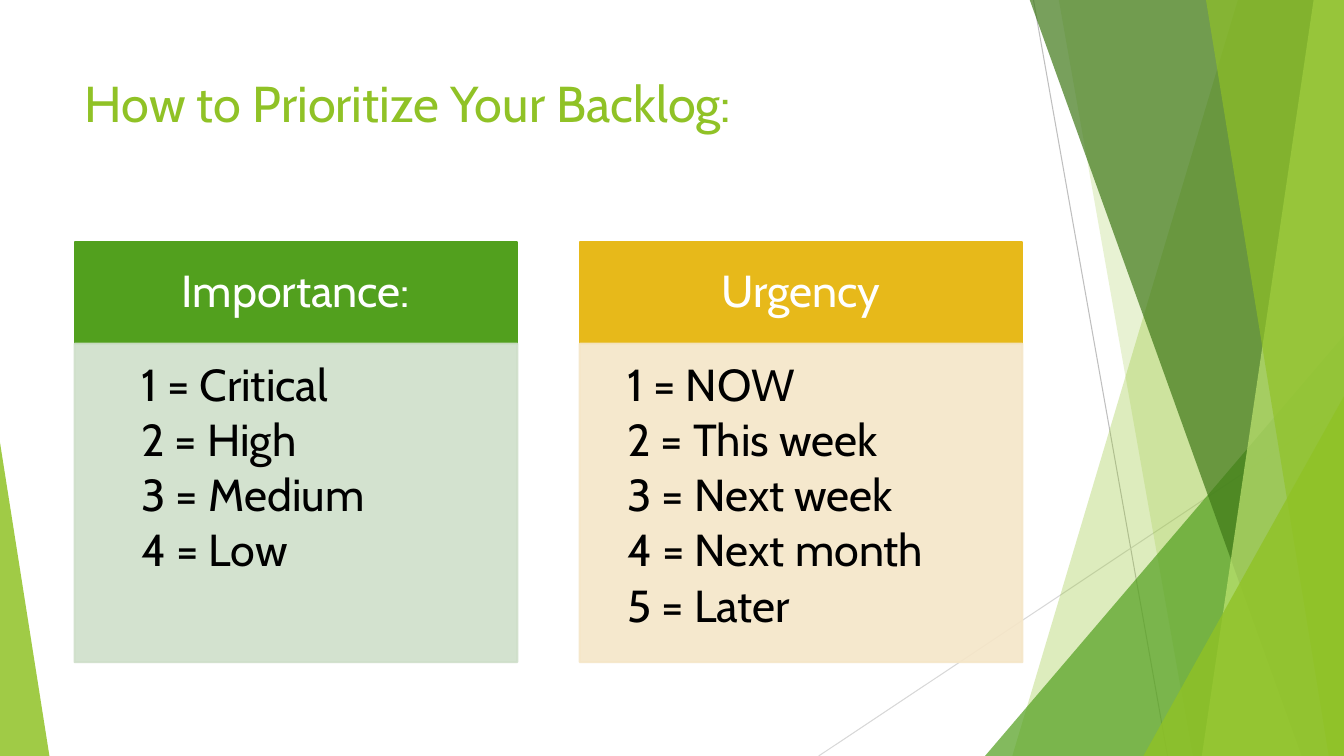
from lxml import etree
from pptx import Presentation
from pptx.dml.color import RGBColor
from pptx.enum.shapes import MSO_CONNECTOR, MSO_SHAPE
from pptx.enum.text import MSO_ANCHOR, MSO_AUTO_SIZE, PP_ALIGN
from pptx.oxml.ns import qn
from pptx.util import Inches, Pt

STRAIGHT = MSO_CONNECTOR.STRAIGHT
TRIANGLE = MSO_SHAPE.ISOSCELES_TRIANGLE
TOP, MIDDLE = MSO_ANCHOR.TOP, MSO_ANCHOR.MIDDLE
LEFT, CENTER = PP_ALIGN.LEFT, PP_ALIGN.CENTER
NO_AUTOFIT = MSO_AUTO_SIZE.NONE
COMPARISON_LAYOUT = 4

COLORS = {
    "lime": "90C226",
    "pale_lime": "BFE471",
    "green": "54A021",
    "dark_green": "3F7818",
    "importance": "52A01E",
    "importance_tint": "CFDFCA",
    "urgency": "E7B91A",
    "urgency_tint": "F5E6C8",
    "gray": "BFBFBF",
    "light_gray": "D8D8D8",
    "white": "FFFFFF",
    "black": "000000",
}
WIDTH, HEIGHT = 13.33, 7.5
CARD_WIDTH = 4.39
HEADING_TOP, HEADING_HEIGHT = 2.4, 1.01
LEVELS_TOP, LEVELS_HEIGHT = 3.41, 3.16


class SlideBuilder:
    font = "Cabin"

    def __init__(self, slide):
        self.slide = slide
        self.shapes = slide.shapes

    def color(self, name):
        return RGBColor.from_string(COLORS[name])

    def paint(self, shape, color, opacity, outlined=False):
        shape.shadow.inherit = False
        shape.fill.solid()
        shape.fill.fore_color.rgb = self.color(color)
        if outlined:
            shape.line.color.rgb = self.color(color)
            shape.line.width = Pt(1.5)
        else:
            shape.line.fill.background()
        if opacity < 100:
            for tone in shape._element.spPr.iter(qn("a:srgbClr")):
                etree.SubElement(tone, qn("a:alpha"), val=str(opacity * 1000))

    def ray(self, start, end, color):
        ray = self.shapes.add_connector(STRAIGHT, *map(Inches, start + end))
        ray.line.color.rgb = self.color(color)
        ray.line.width = Pt(0.75)
        etree.SubElement(ray._element.spPr, qn("a:effectLst"))

    def panel(self, top_x, bottom_x, color, opacity):
        top = Inches(-0.01)
        outline = self.shapes.build_freeform(Inches(top_x), top)
        outline.add_line_segments([
            (Inches(WIDTH), top),
            (Inches(WIDTH), Inches(HEIGHT)),
            (Inches(bottom_x), Inches(HEIGHT)),
        ])
        self.paint(outline.convert_to_shape(), color, opacity)

    def corner(self, left, top, width, peak, color, opacity):
        box = map(Inches, (left, top, width, HEIGHT - top))
        corner = self.shapes.add_shape(TRIANGLE, *box)
        corner.adjustments[0] = peak
        self.paint(corner, color, opacity)

    def fill_placeholder(self, index, text, box, insets, size, color,
                         align=LEFT, anchor=TOP):
        holder = self.slide.placeholders[index]
        self.shapes._spTree.append(holder._element)
        holder.left, holder.top, holder.width, holder.height = map(Inches, box)
        frame = holder.text_frame
        frame.text = text
        frame.word_wrap = True
        frame.auto_size = NO_AUTOFIT
        frame.vertical_anchor = anchor
        (frame.margin_left, frame.margin_top,
         frame.margin_right, frame.margin_bottom) = map(Inches, insets)
        for paragraph in frame.paragraphs:
            paragraph.alignment = align
            paragraph.space_before = Pt(0)
            for run in paragraph.runs:
                run.font.name = self.font
                run.font.size = Pt(size)
                run.font.bold = False
                run.font.color.rgb = self.color(color)
        return holder

    def title(self, text):
        self.fill_placeholder(
            0, text, (0.74, 0.67, 9.4, 1.44), (0.1, 0.05, 0.1, 0.05), 36, "lime")

    def card(self, index, left, heading, levels, indent, color):
        header = self.fill_placeholder(
            index, heading, (left, HEADING_TOP, CARD_WIDTH, HEADING_HEIGHT),
            (0.25, 0.14, 0.25, 0.14), 32, "white", CENTER, MIDDLE)
        self.paint(header, color, 100, outlined=True)
        scale = self.fill_placeholder(
            index + 1, "\n".join(levels), (left, LEVELS_TOP, CARD_WIDTH, LEVELS_HEIGHT),
            (indent, 0.19, 0.25, 0.28), 32, "black")
        self.paint(scale, color + "_tint", 90, outlined=True)
        for paragraph in scale.text_frame.paragraphs[1:]:
            paragraph.space_before = Pt(4.8)
        for paragraph in header.text_frame.paragraphs + scale.text_frame.paragraphs:
            paragraph.line_spacing = 0.9
            properties = paragraph._p.get_or_add_pPr()
            properties.set("marL", "0")
            properties.set("indent", "0")
            etree.SubElement(properties, qn("a:buNone"))


def main():
    deck = Presentation()
    deck.slide_width, deck.slide_height = Inches(WIDTH), Inches(HEIGHT)
    page = SlideBuilder(deck.slides.add_slide(deck.slide_layouts[COMPARISON_LAYOUT]))

    page.ray((10.25, 0), (11.58, HEIGHT), "gray")
    page.ray((WIDTH, 4.03), (8.12, HEIGHT), "light_gray")
    page.panel(12.28, 10.04, "lime", 30)
    page.panel(10.5, 11.83, "lime", 20)
    page.corner(9.77, 3.33, 3.56, 1, "green", 72)
    page.panel(10.21, 12.91, "dark_green", 70)
    page.panel(13.03, 11.92, "pale_lime", 70)
    page.panel(11.96, 13.18, "lime", 65)
    page.corner(11.34, 3.93, 1.99, 1, "lime", 80)
    page.corner(0, 4.39, 0.49, 0, "lime", 85)

    page.title("How to Prioritize Your Backlog:")
    page.card(1, 0.74, "Importance:",
              ["1 = Critical", "2 = High", "3 = Medium", "4 = Low"],
              0.66, "importance")
    page.card(3, 5.75, "Urgency",
              ["1 = NOW", "2 = This week", "3 = Next week", "4 = Next month", "5 = Later"],
              0.47, "urgency")
    deck.save("out.pptx")


if __name__ == "__main__":
    main()
